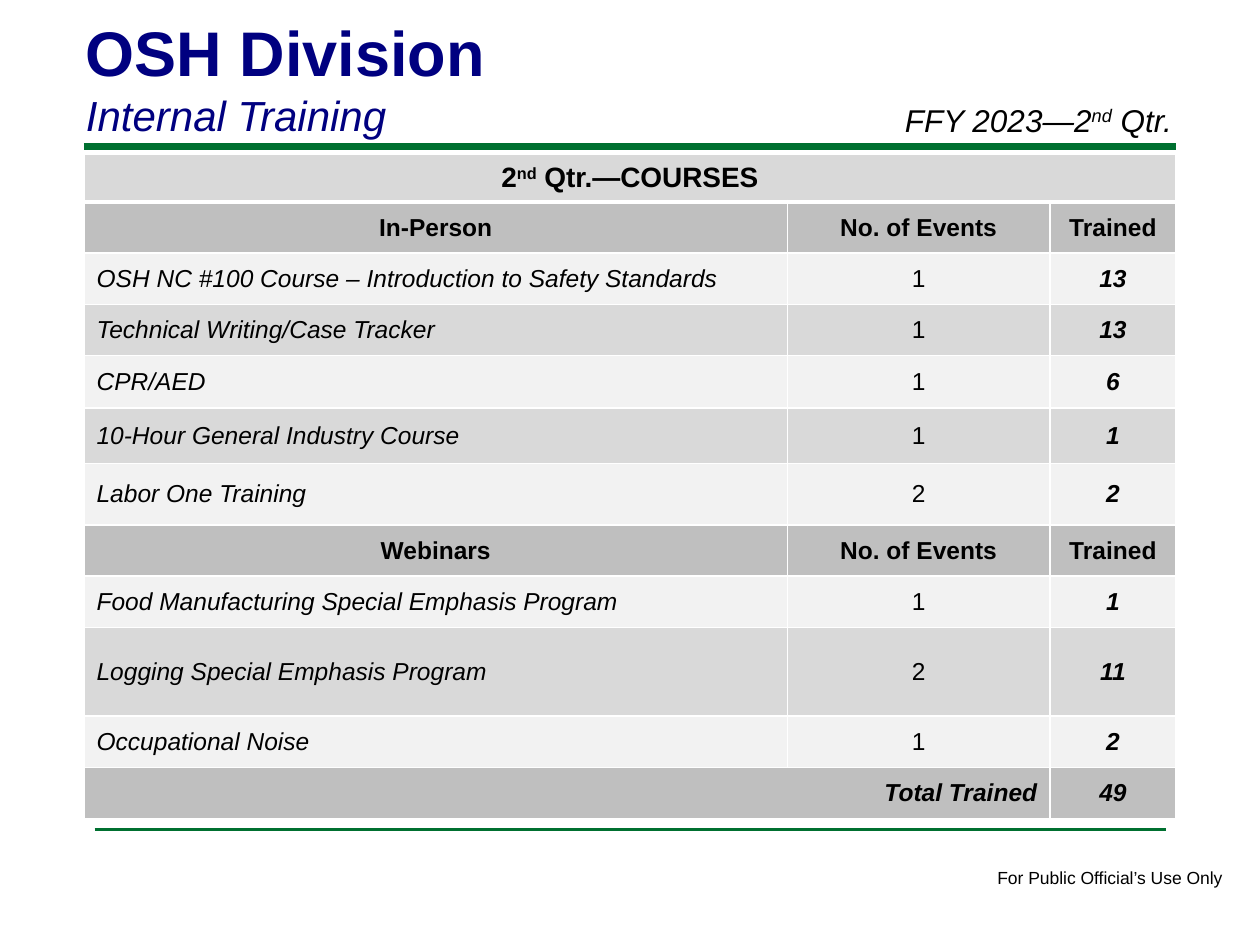
from pptx import Presentation
from pptx.dml.color import RGBColor
from pptx.enum.shapes import MSO_CONNECTOR
from pptx.enum.text import MSO_ANCHOR, MSO_AUTO_SIZE, PP_ALIGN
from pptx.oxml.ns import qn
from pptx.util import Inches, Pt
from lxml.etree import SubElement

WIDE, HIGH = 10, 7.5
COLS, ROWS = 120, 90
LEFT, MID, RIGHT = PP_ALIGN.LEFT, PP_ALIGN.CENTER, PP_ALIGN.RIGHT
HEAD, DARK, PALE = "BFBFBF", "D9D9D9", "F2F2F2"
LIVE = [
    ("OSH NC #100 Course – Introduction to Safety Standards", "1", "13"),
    ("Technical Writing/Case Tracker", "1", "13"),
    ("CPR/AED", "1", "6"),
    ("10-Hour General Industry Course", "1", "1"),
    ("Labor One Training", "2", "2"),
]
WEB = [
    ("Food Manufacturing Special Emphasis Program", "1", "1"),
    ("Logging Special Emphasis Program", "2", "11"),
    ("Occupational Noise", "1", "2"),
]
WIDTHS = [67, 25, 12]
TALL = [4.56, 4.9, 4.9, 4.9, 5, 5.3, 5.9, 4.9, 4.9, 8.5, 4.9, 4.9]


def tint(code):
    return RGBColor.from_string(code)


def across(n):
    return Inches(n * WIDE / COLS)


def down(n):
    return Inches(n * HIGH / ROWS)


def place(box):
    x, y, w, h = box
    return across(x), down(y), across(w), down(h)


def write(para, text, size=14, color="000000", bold=False, slant=False, align=LEFT):
    para.alignment = align
    for i, part in enumerate(text.split("^")):
        run = para.add_run()
        run.text = part
        font = run.font
        font.name, font.size = "Arial", Pt(size)
        font.bold, font.italic = bold, slant
        font.color.rgb = tint(color)
        if i % 2:
            run._r.get_or_add_rPr().set("baseline", "30000")


def frame(slide, box, wrap=True):
    text = slide.shapes.add_textbox(*place(box)).text_frame
    text.word_wrap = wrap
    text.auto_size = MSO_AUTO_SIZE.SHAPE_TO_FIT_TEXT
    return text


def rule(slide, box, weight):
    x, y, w, h = place(box)
    line = slide.shapes.add_connector(MSO_CONNECTOR.STRAIGHT, x, y, x + w, y + h)
    line.line.color.rgb = tint("007030")
    line.line.width = Pt(weight)
    SubElement(line._element.spPr, qn("a:effectLst"))


def header(slide, box):
    x, y, w, h = box
    text = frame(slide, (x - 1, y, w - 5, h))
    write(text.paragraphs[0], "OSH Division", size=36, color="000080", bold=True)
    write(text.add_paragraph(), "Internal Training", size=24, color="000080", slant=True)
    term = frame(slide, (x + w - 27, y + h - 5, 30, 4.8))
    write(term.paragraphs[0], "FFY 2023—2^nd^ Qtr.", size=18, slant=True)
    rule(slide, (x, y + h, w, 0), 4)


def footer(slide, box):
    x, y, w, h = box
    rule(slide, (x + 1, y, w - 2, 0), 2)
    note = frame(slide, (x + w - 18.2, y + 3, 24.1, 3.2), wrap=False)
    write(note.paragraphs[0], "For Public Official’s Use Only", size=10)


def edge(cell, base):
    props = cell._tc.get_or_add_tcPr()
    for side in "LRTB":
        weight = base if side == "B" else 1
        line = SubElement(props, qn("a:ln" + side), w=str(Pt(weight)))
        fill = SubElement(line, qn("a:solidFill"))
        SubElement(fill, qn("a:srgbClr"), val="FFFFFF")


def paint(cell, color, text="", base=1, **look):
    edge(cell, base)
    cell.fill.solid()
    cell.fill.fore_color.rgb = tint(color)
    cell.vertical_anchor = MSO_ANCHOR.MIDDLE
    if text:
        write(cell.text_frame.paragraphs[0], text, **look)


def group(grid, top, name, items):
    for col, text in enumerate((name, "No. of Events", "Trained")):
        paint(grid.cell(top, col), HEAD, text, bold=True, align=MID)
    for i, (course, count, total) in enumerate(items):
        row, color = top + 1 + i, (PALE, DARK)[i % 2]
        paint(grid.cell(row, 0), color, course, slant=True)
        paint(grid.cell(row, 1), color, count, align=MID)
        paint(grid.cell(row, 2), color, total, bold=True, slant=True, align=MID)
    return top + 1 + len(items)


def courses(slide, box):
    grid = slide.shapes.add_table(len(TALL), len(WIDTHS), *place(box)).table
    for col, share in zip(grid.columns, WIDTHS):
        col.width = across(box[2] * share / sum(WIDTHS))
    for row, share in zip(grid.rows, TALL):
        row.height = down(box[3] * share / sum(TALL))
    grid.cell(0, 0).merge(grid.cell(0, 2))
    for col in range(3):
        text = "" if col else "2^nd^ Qtr.—COURSES"
        paint(grid.cell(0, col), DARK, text, base=3, size=16, bold=True, align=MID)
    last = group(grid, group(grid, 1, "In-Person", LIVE), "Webinars", WEB)
    grid.cell(last, 0).merge(grid.cell(last, 1))
    ends = (("Total Trained", RIGHT), ("", LEFT), ("49", MID))
    for col, (text, align) in enumerate(ends):
        paint(grid.cell(last, col), HEAD, text, bold=True, slant=True, align=align)


def main():
    deck = Presentation()
    deck.slide_width, deck.slide_height = Inches(WIDE), Inches(HIGH)
    slide = deck.slides.add_slide(deck.slide_layouts[6])
    footer(slide, (8, 79, 104, 7))
    header(slide, (8, 0.7, 104, 13.3))
    courses(slide, (8, 14.7, 104, 63.3))
    deck.save("out.pptx")


if __name__ == "__main__":
    main()
